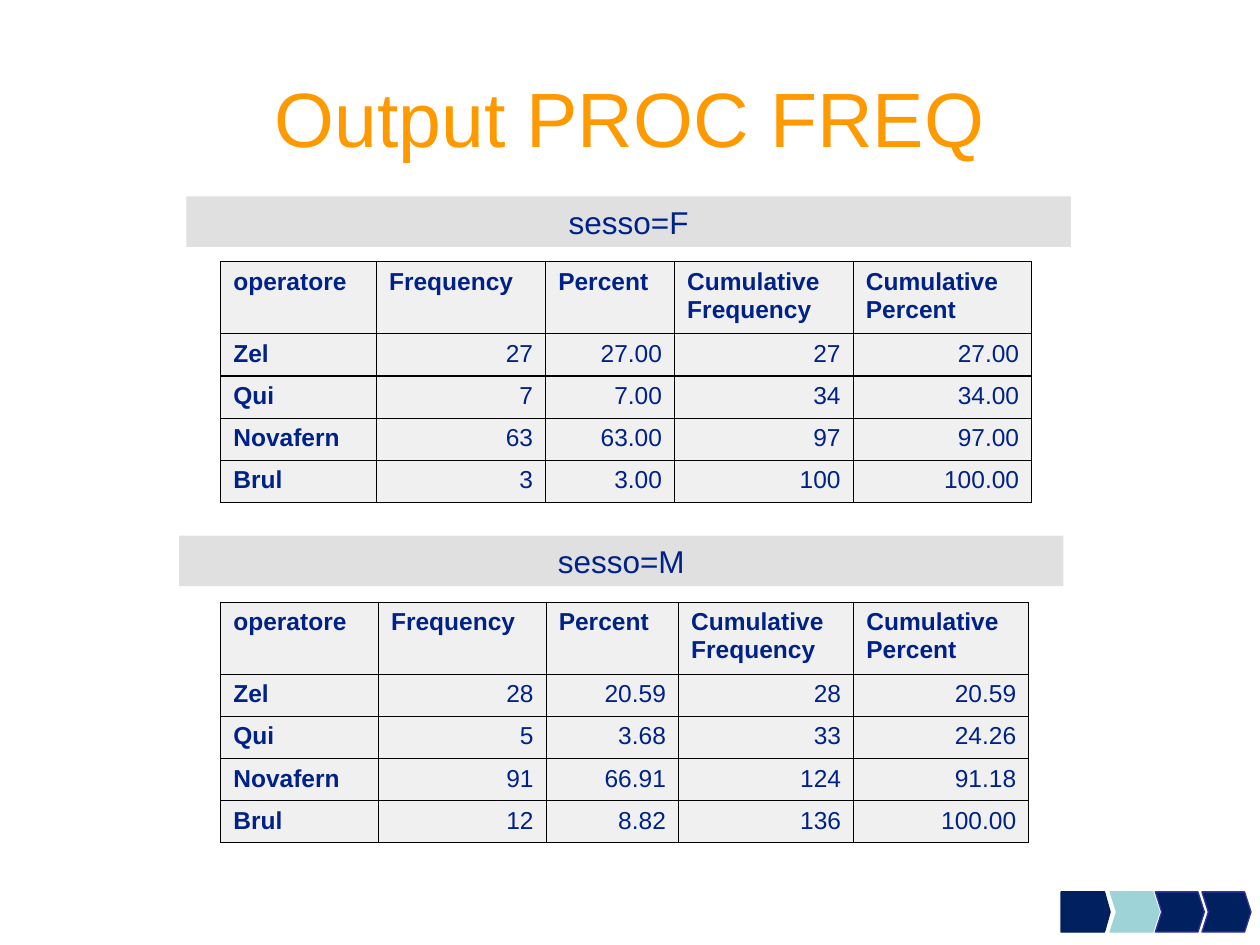
from lxml import etree
from pptx import Presentation
from pptx.enum.shapes import MSO_SHAPE
from pptx.enum.text import MSO_ANCHOR, PP_ALIGN
from pptx.dml.color import RGBColor
from pptx.oxml.ns import qn
from pptx.util import Cm, Pt

LEFT, CENTER, RIGHT = PP_ALIGN.LEFT, PP_ALIGN.CENTER, PP_ALIGN.RIGHT
MIDDLE = MSO_ANCHOR.MIDDLE
RECTANGLE, CHEVRON, PENTAGON = MSO_SHAPE.RECTANGLE, MSO_SHAPE.CHEVRON, MSO_SHAPE.PENTAGON

ORANGE, BLUE, NAVY, INDIGO, TEAL = "FF9900", "002288", "002060", "333399", "9ED3D7"
BAND_GRAY, CELL_GRAY, BLACK = "E0E0E0", "F0F0F0", "000000"


def paint(fill, color):
    """Make a shape, cell, line or font fill solid in a hex colour."""
    fill.solid()
    fill.fore_color.rgb = RGBColor.from_string(color)


def write_text(text_frame, text, size, color=BLUE, bold=False, align=LEFT):
    text_frame.word_wrap = True
    paragraph = text_frame.paragraphs[0]
    paragraph.text = text
    paragraph.alignment = align
    for run in paragraph.runs:
        run.font.name = "Arial"
        run.font.size = Pt(size)
        run.font.bold = bold
        paint(run.font.fill, color)
    # Line breaks need the text size too, or they stretch their line
    for line_break in paragraph._p.findall(qn("a:br")):
        etree.SubElement(line_break, qn("a:rPr"), sz=str(size * 100))


presentation = Presentation()
presentation.slide_width, presentation.slide_height = Cm(25.4), Cm(19.05)
slide = presentation.slides.add_slide(presentation.slide_layouts[6])

title = slide.shapes.add_textbox(Cm(1.27), Cm(0.76), Cm(22.86), Cm(3.18))
title.text_frame.vertical_anchor = MIDDLE
write_text(title.text_frame, "Output PROC FREQ", 44, ORANGE, align=CENTER)

# Frequency tables, one per sex, each under its heading band
headers = ["operatore", "Frequency", "Percent", "Cumulative\nFrequency", "Cumulative\nPercent"]
row_heights = [1.45] + [0.85] * 4
groups = [
    ("sesso=F", 3.76, 3.96, 5.28, [3.14, 3.41, 2.6, 3.6, 3.6], [
        ["Zel", "27", "27.00", "27", "27.00"],
        ["Qui", "7", "7.00", "34", "34.00"],
        ["Novafern", "63", "63.00", "97", "97.00"],
        ["Brul", "3", "3.00", "100", "100.00"],
    ]),
    ("sesso=M", 3.61, 10.8, 12.14, [3.18, 3.38, 2.67, 3.53, 3.53], [
        ["Zel", "28", "20.59", "28", "20.59"],
        ["Qui", "5", "3.68", "33", "24.26"],
        ["Novafern", "91", "66.91", "124", "91.18"],
        ["Brul", "12", "8.82", "136", "100.00"],
    ]),
]
for heading, band_left, band_top, table_top, column_widths, records in groups:
    band = slide.shapes.add_shape(RECTANGLE, Cm(band_left), Cm(band_top), Cm(17.83), Cm(1.02))
    band.shadow.inherit = False
    paint(band.fill, BAND_GRAY)
    band.line.fill.background()
    band.text_frame.vertical_anchor = MIDDLE
    write_text(band.text_frame, heading, 18, align=CENTER)

    table = slide.shapes.add_table(
        len(row_heights), len(headers), Cm(4.45), Cm(table_top),
        Cm(sum(column_widths)), Cm(sum(row_heights))).table
    table.first_row = table.horz_banding = False
    for column, width in zip(table.columns, column_widths):
        column.width = Cm(width)
    for row, height in zip(table.rows, row_heights):
        row.height = Cm(height)

    for row_index, values in enumerate([headers] + records):
        for column_index, value in enumerate(values):
            cell = table.cell(row_index, column_index)
            is_label = row_index == 0 or column_index == 0
            write_text(cell.text_frame, value, 14, bold=is_label,
                       align=LEFT if is_label else RIGHT)
            properties = cell._tc.get_or_add_tcPr()
            for side in ("a:lnL", "a:lnR", "a:lnT", "a:lnB"):
                border = etree.SubElement(properties, qn(side), w=str(Pt(0.75)))
                border_fill = etree.SubElement(border, qn("a:solidFill"))
                etree.SubElement(border_fill, qn("a:srgbClr"), val=BLACK)
            paint(cell.fill, CELL_GRAY)

# Progress arrows in the bottom right corner
arrows = [
    (CHEVRON, 23.29, 0.16, NAVY, INDIGO),
    (PENTAGON, 21.39, 0.14, NAVY, NAVY),
    (CHEVRON, 22.38, 0.16, TEAL, TEAL),
    (CHEVRON, 24.23, 0.16, NAVY, INDIGO),
]
for kind, left, point, fill_color, line_color in arrows:
    arrow = slide.shapes.add_shape(kind, Cm(left), Cm(17.98), Cm(0.99), Cm(0.81))
    arrow.shadow.inherit = False
    arrow.adjustments[0] = point
    paint(arrow.fill, fill_color)
    paint(arrow.line.fill, line_color)
    arrow.line.width = Pt(0.75)

presentation.save("out.pptx")
